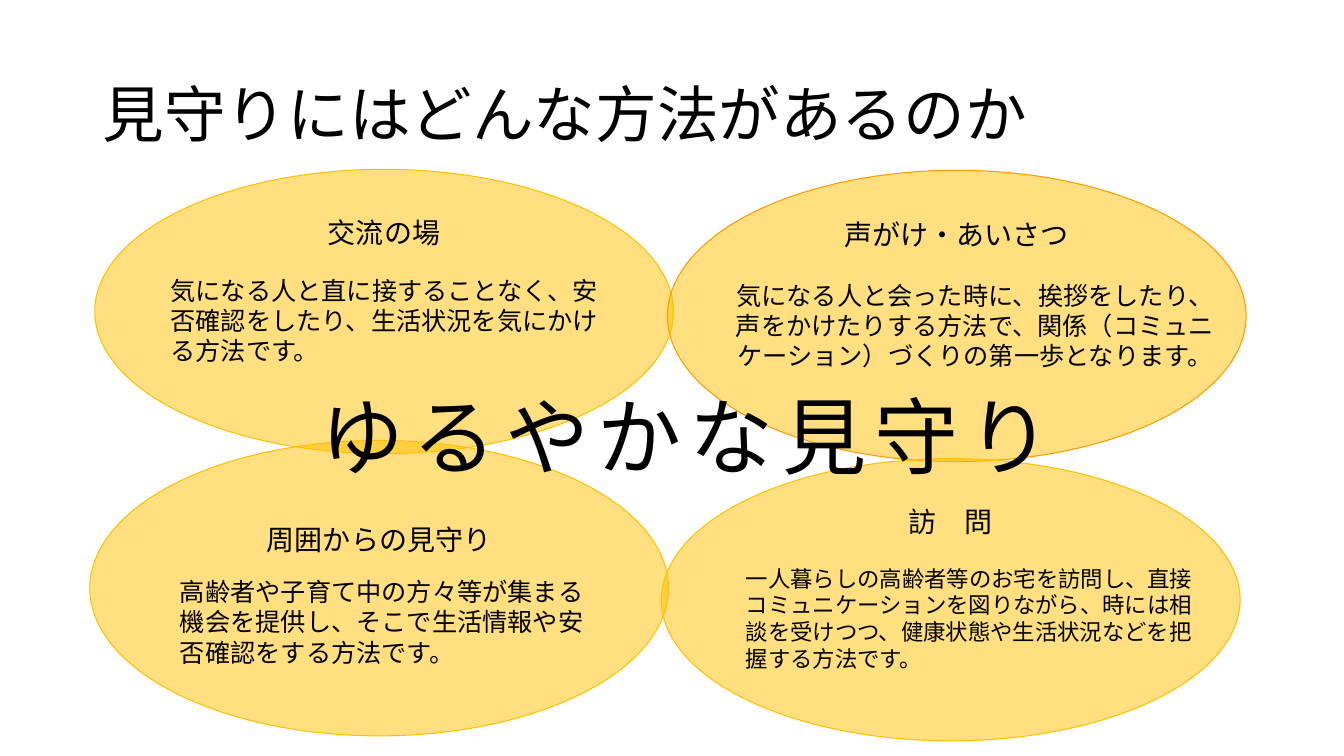
from pptx import Presentation
from pptx import util as u
from pptx.dml.color import RGBColor
from pptx.enum import shapes, text
from pptx.oxml import parse_xml
from pptx.oxml.ns import qn

FONT = "Noto Sans CJK JP"
BLACK = RGBColor(0x00, 0x00, 0x00)
AMBER = RGBColor(0xFF, 0xC0, 0x00)
ORANGE = RGBColor(0xFF, 0x99, 0x00)
NS = 'xmlns:a="http://schemas.openxmlformats.org/drawingml/2006/main"'

# Grid: 100 columns by 100 rows over the slide
WIDTH, HEIGHT = u.Inches(13.33), u.Inches(7.5)
COL, ROW = WIDTH / 100, HEIGHT / 100
OVAL_COLS = 43.06
LINE_RATIO = 1.2

LEFT, CENTER = text.PP_ALIGN.LEFT, text.PP_ALIGN.CENTER
TOP, MIDDLE = text.MSO_ANCHOR.TOP, text.MSO_ANCHOR.MIDDLE

# heading, oval (col, row, rows), outline, blank lines above the heading,
# body, body box (col, row, cols, rows), body size, body alignment
METHODS = [
    ("周囲からの見守り", (6.68, 58.27, 39.07), AMBER, 1,
     "高齢者や子育て中の方々等が集まる機会を提供し、そこで生活情報や安否確認をする方法です。",
     (12.23, 74.53, 32.41, 15.47), 18, LEFT),
    ("交流の場", (7.05, 22.4, 37.6), AMBER, 0,
     "気になる人と直に接することなく、安否確認をしたり、生活状況を気にかける方法です。",
     (11.33, 31.2, 35.71, 22.4), 18, LEFT),
    ("声がけ・あいさつ", (49.66, 22.53, 38.53), ORANGE, 0,
     "気になる人と会った時に、挨拶をしたり、声をかけたりする方法で、"
     "関係（コミュニケーション）づくりの第一歩となります。",
     (52.81, 30.27, 39.46, 25.6), 18, CENTER),
    ("訪　問", (49.21, 60.67, 37.33), AMBER, 0,
     "一人暮らしの高齢者等のお宅を訪問し、直接コミュニケーションを図りながら、"
     "時には相談を受けつつ、健康状態や生活状況などを把握する方法です。",
     (54.24, 72.27, 36.53, 19.07), 16, LEFT),
]


def place(col, row, cols, rows):
    return [round(v) for v in (col * COL, row * ROW, cols * COL, rows * ROW)]


def write(sp, words, size, align=LEFT, anchor=TOP, spacing=0):
    tf = sp.text_frame
    tf.word_wrap = True
    tf.vertical_anchor = anchor
    p = tf.paragraphs[0]
    p.text = words
    p.alignment = align
    p.line_spacing = u.Pt(size * LINE_RATIO)
    r = p.runs[0]
    r.font.size = u.Pt(size)
    r.font.name = FONT
    r.font.color.rgb = BLACK
    rpr = r.font._element
    rpr.find(qn("a:latin")).addnext(parse_xml(f'<a:ea {NS} typeface="{FONT}"/>'))
    if spacing:
        rpr.set("spc", str(spacing * 100))


def add_label(slide, box, words, size, **style):
    sp = slide.shapes.add_textbox(*place(*box))
    write(sp, words, size, **style)


def add_oval(slide, box, outline, heading, blank_lines):
    col, row, rows = box
    sp = slide.shapes.add_shape(shapes.MSO_SHAPE.OVAL, *place(col, row, OVAL_COLS, rows))
    sp.shadow.inherit = False
    sp.fill.solid()
    sp.fill.fore_color.rgb = AMBER
    color = sp.fill._xPr.find(qn("a:solidFill"))[0]
    color.append(parse_xml(f'<a:alpha {NS} val="50000"/>'))
    sp.line.color.rgb = outline
    sp.line.width = u.Pt(0.75)
    write(sp, heading, 20, align=CENTER)
    sp.text_frame.margin_top = u.Inches(0.05) + blank_lines * u.Pt(20 * LINE_RATIO)


def add_body(slide, box, words, size, align):
    sp = slide.shapes.add_shape(shapes.MSO_SHAPE.ROUNDED_RECTANGLE, *place(*box))
    sp.shadow.inherit = False
    sp.fill.background()
    sp.line.fill.background()
    write(sp, words, size, align=align, anchor=MIDDLE)


def main():
    prs = Presentation()
    prs.slide_width, prs.slide_height = WIDTH, HEIGHT
    slide = prs.slides.add_slide(prs.slide_layouts[6])

    # Title
    add_label(slide, (6.9, 5.33, 86.27, 19.33), "見守りにはどんな方法があるのか", 44,
              anchor=MIDDLE)

    # Four methods
    for heading, oval, outline, blank_lines, body, box, size, align in METHODS:
        add_oval(slide, oval, outline, heading, blank_lines)
        add_body(slide, box, body, size, align)

    # Slogan across the centre
    add_label(slide, (20.78, 50.27, 60.54, 14.8), "ゆるやかな見守り", 60,
              align=CENTER, spacing=6)

    prs.save("out.pptx")


if __name__ == "__main__":
    main()
